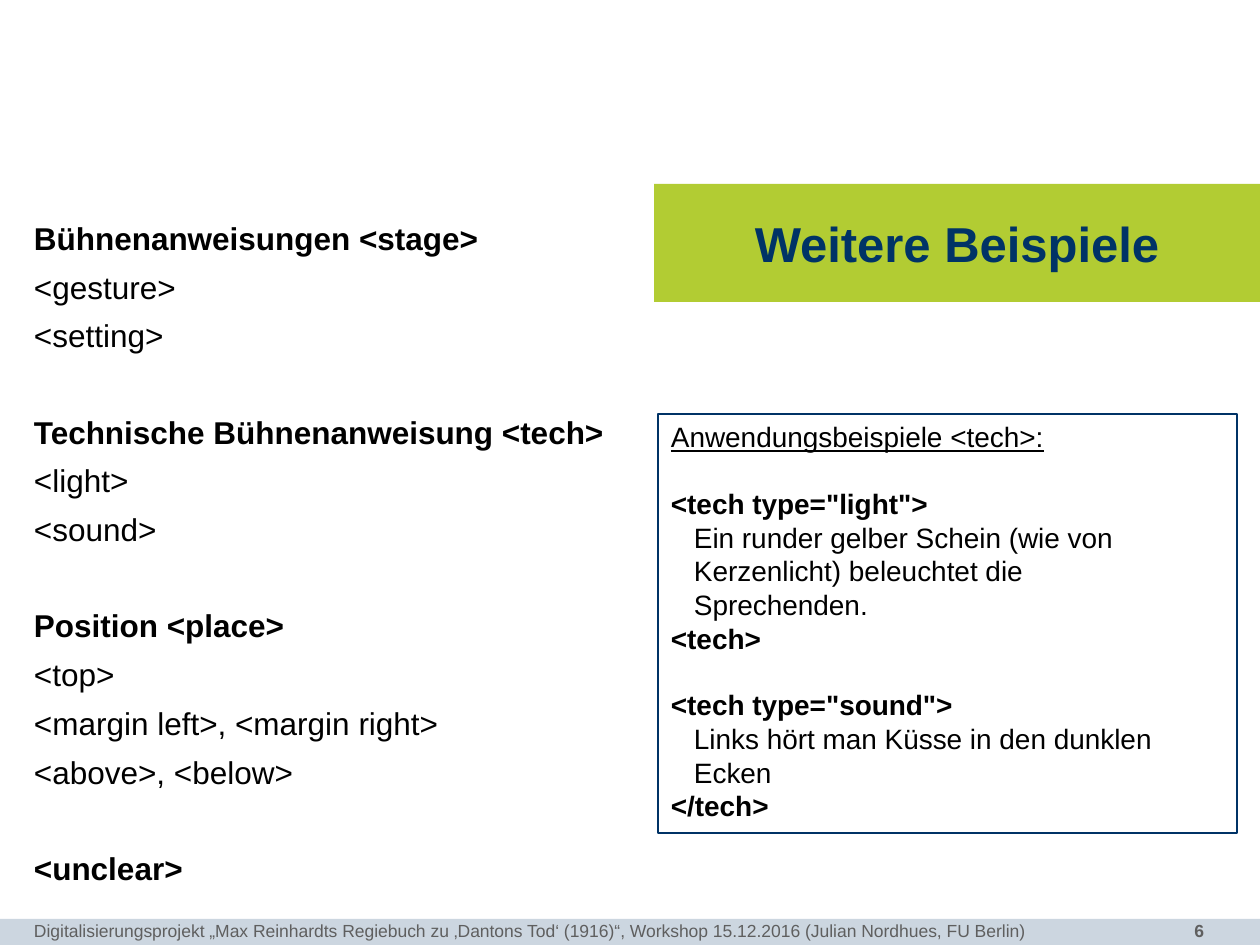
"""Build the slide on further markup examples for stage directions."""
import copy

import pptx
import pptx.dml.color
import pptx.enum.shapes
import pptx.enum.text
import pptx.oxml.ns
import pptx.util

SCALE = 914400 / 126
NAVY = pptx.dml.color.RGBColor(0x00, 0x33, 0x66)
GREEN = pptx.dml.color.RGBColor(0xB2, 0xCC, 0x33)
MIST = pptx.dml.color.RGBColor(0xCC, 0xD6, 0xE0)
GRAY = pptx.dml.color.RGBColor(0x5F, 0x5F, 0x5F)
BLACK = pptx.dml.color.RGBColor(0x00, 0x00, 0x00)
ALIGN = pptx.enum.text.PP_ALIGN
ANCHOR = pptx.enum.text.MSO_ANCHOR
RECTANGLE = pptx.enum.shapes.MSO_SHAPE.RECTANGLE


def px(*lengths):
    return [pptx.util.Emu(round(length * SCALE)) for length in lengths]


def write(box, lines, size, color, margins, align=ALIGN.LEFT, anchor=ANCHOR.TOP, spacing=1.0):
    frame = box.text_frame
    left, top, right, bottom = px(*margins)
    settings = {"word_wrap": True, "vertical_anchor": anchor, "margin_left": left,
                "margin_top": top, "margin_right": right, "margin_bottom": bottom,
                "auto_size": pptx.enum.text.MSO_AUTO_SIZE.NONE}
    for name, value in settings.items():
        setattr(frame, name, value)
    for number, (text, before, indent, style) in enumerate(lines):
        para = frame.add_paragraph() if number else frame.paragraphs[0]
        para.text = text
        layout = {"alignment": align, "line_spacing": spacing,
                  "space_before": pptx.util.Pt(before)}
        for name, value in layout.items():
            setattr(para, name, value)
        if indent:
            para._p.get_or_add_pPr().set("marL", str(px(indent)[0]))
        look = {"name": "Arial", "size": pptx.util.Pt(size), "bold": False, **style}
        for span in para.runs:
            for name, value in look.items():
                setattr(span.font, name, value)
            span.font.color.rgb = color
        for line_break in para._p.findall(pptx.oxml.ns.qn("a:br")):
            line_break.append(copy.deepcopy(para.runs[0]._r.rPr))


BOLD = {"bold": True}
deck = pptx.Presentation()
deck.slide_width, deck.slide_height = px(1260, 945)
page = deck.slides.add_slide(deck.slide_layouts[5])

bar = page.shapes.add_shape(RECTANGLE, *px(0, 919, 1260, 26))
bar.shadow.inherit = False
bar.fill.solid()
bar.fill.fore_color.rgb = MIST
bar.line.fill.background()

page_number = page.shapes.add_textbox(*px(1048, 914, 169, 33))
write(page_number, [("6", 0, 0, BOLD)], 10, GRAY, (13, 6, 13, 6), ALIGN.RIGHT)

groups = [
    ("Bühnenanweisungen <stage>", ["<gesture>", "<setting>"]),
    ("Technische Bühnenanweisung <tech>", ["<light>", "<sound>"]),
    ("Position <place>", ["<top>", "<margin left>, <margin right>", "<above>, <below>"]),
    ("<unclear>", []),
]
tag_lines = []
for heading, tags in groups:
    tag_lines.append((heading, 32.9 if tag_lines else 0, 0, BOLD))
    tag_lines += [(tag, 5.9, 0, {}) for tag in tags]
tag_list = page.shapes.add_textbox(*px(34, 218, 591, 684))
write(tag_list, tag_lines, 18, BLACK, (0, 0, 0, 0), spacing=1.02)

title = page.shapes.title
title.left, title.top, title.width, title.height = px(654, 184, 606, 118)
title.fill.solid()
title.fill.fore_color.rgb = GREEN
write(title, [("Weitere Beispiele", 0, 0, BOLD)], 28, NAVY, (29, 14, 29, 14),
      ALIGN.CENTER, ANCHOR.MIDDLE)

footer = page.shapes.add_textbox(*px(34, 914, 1128, 32))
project = ("Digitalisierungsprojekt „Max Reinhardts Regiebuch zu ‚Dantons Tod‘ (1916)“, "
           "Workshop 15.12.2016 (Julian Nordhues, FU Berlin)")
write(footer, [(project, 0, 0, {})], 10, GRAY, (0, 6, 0, 6))

examples = page.shapes.add_shape(RECTANGLE, *px(658, 414, 579, 419))
examples.shadow.inherit = False
examples.fill.background()
examples.line.color.rgb = NAVY
examples.line.width = pptx.util.Pt(0.75)
example_lines = [("Anwendungsbeispiele <tech>:", 0, 0, {"underline": True})]
for opening, quote, closing in [
    ('<tech type="light">',
     "Ein runder gelber Schein (wie von\vKerzenlicht) beleuchtet die\vSprechenden.", "<tech>"),
    ('<tech type="sound">', "Links hört man Küsse in den dunklen\vEcken", "</tech>"),
]:
    example_lines += [(opening, 19, 0, BOLD), (quote, 0, 23, {}), (closing, 0, 0, BOLD)]
write(examples, example_lines, 16, BLACK, (13, 6, 13, 6))

deck.save("out.pptx")
